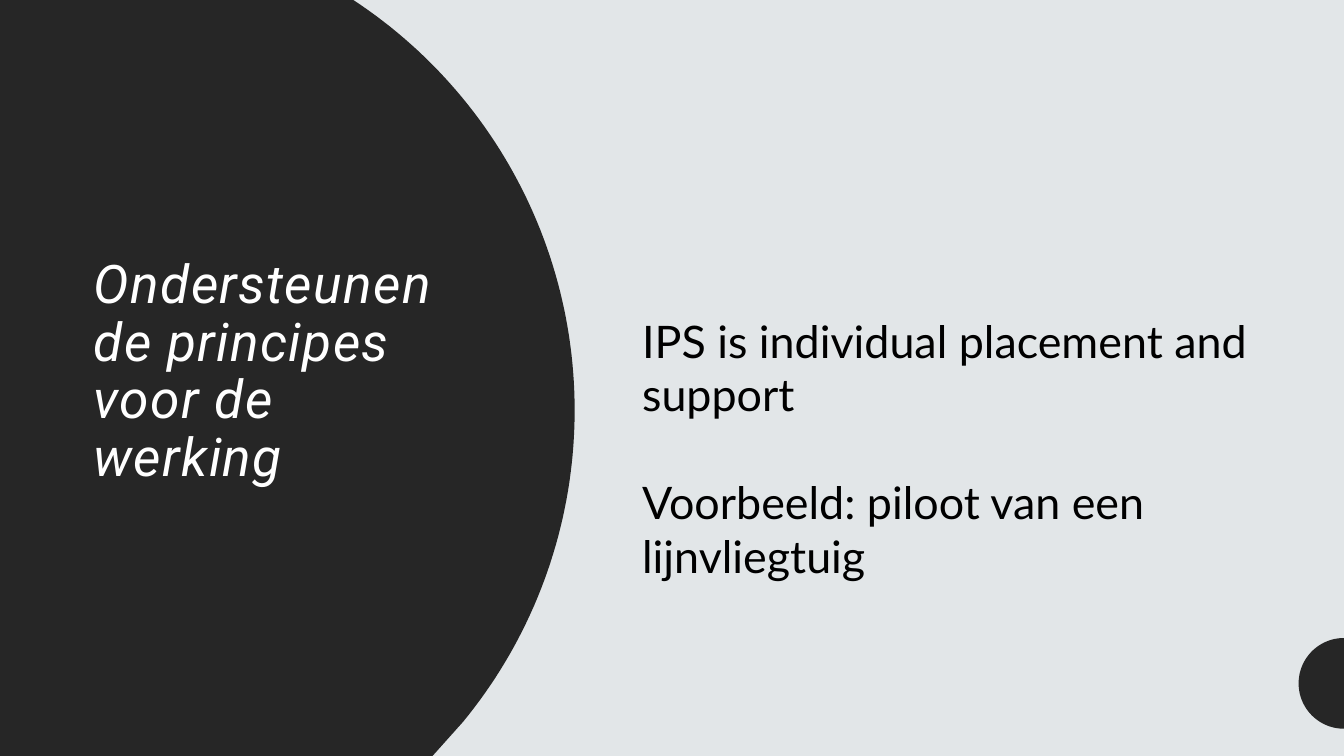
"""Build a slide with a title on a dark disc and two statements beside it."""
import math

import pptx
import pptx.dml.color
import pptx.enum.text
import pptx.util

PALE = pptx.dml.color.RGBColor(0xE2, 0xE6, 0xE8)
DARK = pptx.dml.color.RGBColor(0x26, 0x26, 0x26)
WHITE = pptx.dml.color.RGBColor(0xFF, 0xFF, 0xFF)
BLACK = pptx.dml.color.RGBColor(0x00, 0x00, 0x00)
WIDTH, HEIGHT = 13.33, 7.5
ARC_STEPS = 90


def arc(center_x, center_y, radius, start, end):
    """Return points in inches along an arc given in degrees."""
    angles = [math.radians(start + (end - start) * step / ARC_STEPS) for step in range(ARC_STEPS + 1)]
    return [(center_x + radius * math.cos(a), center_y + radius * math.sin(a)) for a in angles]


def style(span, font_name, size, color):
    """Set the face, size and colour of a run."""
    span.font.name = font_name
    span.font.size = pptx.util.Pt(size)
    span.font.color.rgb = color


deck = pptx.Presentation()
deck.slide_width = pptx.util.Inches(WIDTH)
deck.slide_height = pptx.util.Inches(HEIGHT)
page = deck.slides.add_slide(deck.slide_layouts[5])
page.background.fill.solid()
page.background.fill.fore_color.rgb = PALE

title_disc = [(0, 0)] + arc(0.83, 4.07, 4.87, -56.7, 39.4) + [(4.29, HEIGHT), (0, HEIGHT)]
edge_disc = arc(WIDTH, 6.78, 0.45, 90, 270)
for outline in (title_disc, edge_disc):
    points = [(pptx.util.Inches(x), pptx.util.Inches(y)) for x, y in outline]
    builder = page.shapes.build_freeform(*points[0])
    builder.add_line_segments(points[1:], close=True)
    disc = builder.convert_to_shape()
    disc.shadow.inherit = False
    disc.fill.solid()
    disc.fill.fore_color.rgb = DARK
    disc.line.fill.background()

title = page.shapes.title
page.shapes.element.append(title.element)
title.left, title.top, title.width, title.height = map(pptx.util.Inches, (0.83, 1.23, 3.77, 3.66))
title.text_frame.text = "Ondersteunende principes voor de werking"
title.text_frame.word_wrap = True
title.text_frame.auto_size = pptx.enum.text.MSO_AUTO_SIZE.NONE
title.text_frame.vertical_anchor = pptx.enum.text.MSO_ANCHOR.BOTTOM
para = title.text_frame.paragraphs[0]
para.alignment = pptx.enum.text.PP_ALIGN.LEFT
para.line_spacing = 0.9
span = para.runs[0]
style(span, "Roboto", 38, WHITE)
span.font.italic = True
span.font._element.set("spc", "100")

box = page.shapes.add_textbox(*map(pptx.util.Inches, (6.27, 3.06, 6.62, 2.79)))
box.text_frame.word_wrap = True
box.text_frame.auto_size = pptx.enum.text.MSO_AUTO_SIZE.SHAPE_TO_FIT_TEXT
box.text_frame.text = "IPS is individual placement and support\nVoorbeeld: piloot van een lijnvliegtuig"
for para in box.text_frame.paragraphs:
    style(para.runs[0], "Lato", 32, BLACK)
box.text_frame.paragraphs[1].space_before = pptx.util.Pt(38.4)

deck.save("out.pptx")
